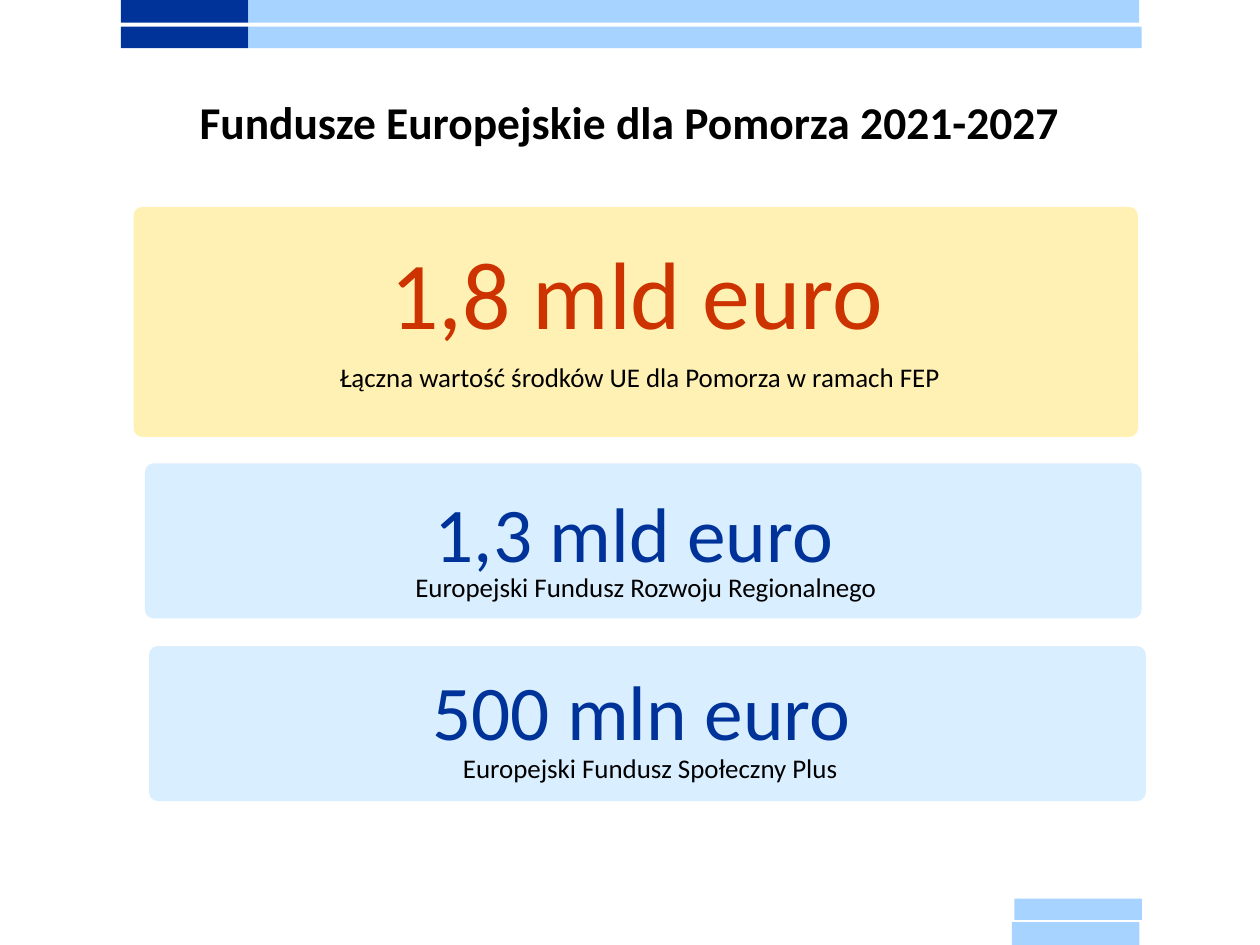
from pptx import Presentation
from pptx import util as u
from pptx.dml.color import RGBColor
from pptx.enum import shapes, text

NAVY = RGBColor(0x00, 0x33, 0x99)
SKY = RGBColor(0xA6, 0xD3, 0xFF)
PALE_BLUE = RGBColor(0xD9, 0xEE, 0xFF)
YELLOW = RGBColor(0xFF, 0xF1, 0xB3)
RED = RGBColor(0xCC, 0x33, 0x00)
BLACK = RGBColor(0, 0, 0)
FONT = "Calibri"
CORNER = 5


def add_block(s, kind, box, color):
    sp = s.shapes.add_shape(kind, *map(u.Pt, box))
    sp.shadow.inherit = False
    sp.fill.solid()
    sp.fill.fore_color.rgb = color
    sp.line.fill.background()
    return sp


def add_bar(s, box, color):
    add_block(s, shapes.MSO_SHAPE.RECTANGLE, box, color)


def add_panel(s, box, color):
    sp = add_block(s, shapes.MSO_SHAPE.ROUNDED_RECTANGLE, box, color)
    sp.adjustments[0] = CORNER / box[3]


def add_label(s, wording, box, size, spacing, color, bold=False):
    tf = s.shapes.add_textbox(*map(u.Pt, box)).text_frame
    tf.word_wrap = True
    tf.margin_left = tf.margin_top = tf.margin_right = tf.margin_bottom = 0
    p = tf.paragraphs[0]
    p.text = wording
    p.alignment = text.PP_ALIGN.CENTER
    p.line_spacing = u.Pt(spacing)
    r = p.runs[0]
    r.font.name = FONT
    r.font.size = u.Pt(size)
    r.font.bold = bold
    r.font.color.rgb = color


def add_amount(s, wording, box, color=NAVY, size=44.2, spacing=61.9):
    add_label(s, wording, box, size, spacing, color)


def add_caption(s, wording, left, top, width):
    add_label(s, wording, (left, top, width, 17.4), 15.4, 17.4, BLACK)


def main():
    prs = Presentation()
    prs.slide_width, prs.slide_height = u.Pt(720), u.Pt(540)
    s = prs.slides.add_slide(prs.slide_layouts[6])

    for top, height, right in ((0, 13, 650.9), (15.3, 12.2, 652.4)):
        add_bar(s, (69.1, top, 72.9, height), NAVY)
        add_bar(s, (142, top, right - 142, height), SKY)
    add_bar(s, (579.6, 513.5, 72.9, 12.2), SKY)
    add_bar(s, (578.2, 527, 72.9, 13), SKY)

    add_label(s, "Fundusze Europejskie dla Pomorza 2021-2027",
              (0, 52.6, 720, 32), 26, 32.5, BLACK, bold=True)

    add_panel(s, (76.3, 118.2, 574, 131.5), YELLOW)
    add_amount(s, "1,8 mld euro", (77, 126, 574, 70), RED, 54.7, 73)
    add_caption(s, "Łączna wartość środków UE dla Pomorza w ramach FEP", 78.5, 207.4, 574)

    add_panel(s, (82.8, 264.8, 569.6, 88.6), PALE_BLUE)
    add_amount(s, "1,3 mld euro", (82.1, 268.6, 560.2, 59))
    add_caption(s, "Europejski Fundusz Rozwoju Regionalnego", 85, 326.9, 568)

    add_panel(s, (85.2, 369.2, 569.6, 88.6), PALE_BLUE)
    add_amount(s, "500 mln euro", (82.8, 370.1, 567.4, 59))
    add_caption(s, "Europejski Fundusz Społeczny Plus", 87.8, 430.6, 567.4)

    prs.save("out.pptx")


if __name__ == "__main__":
    main()
